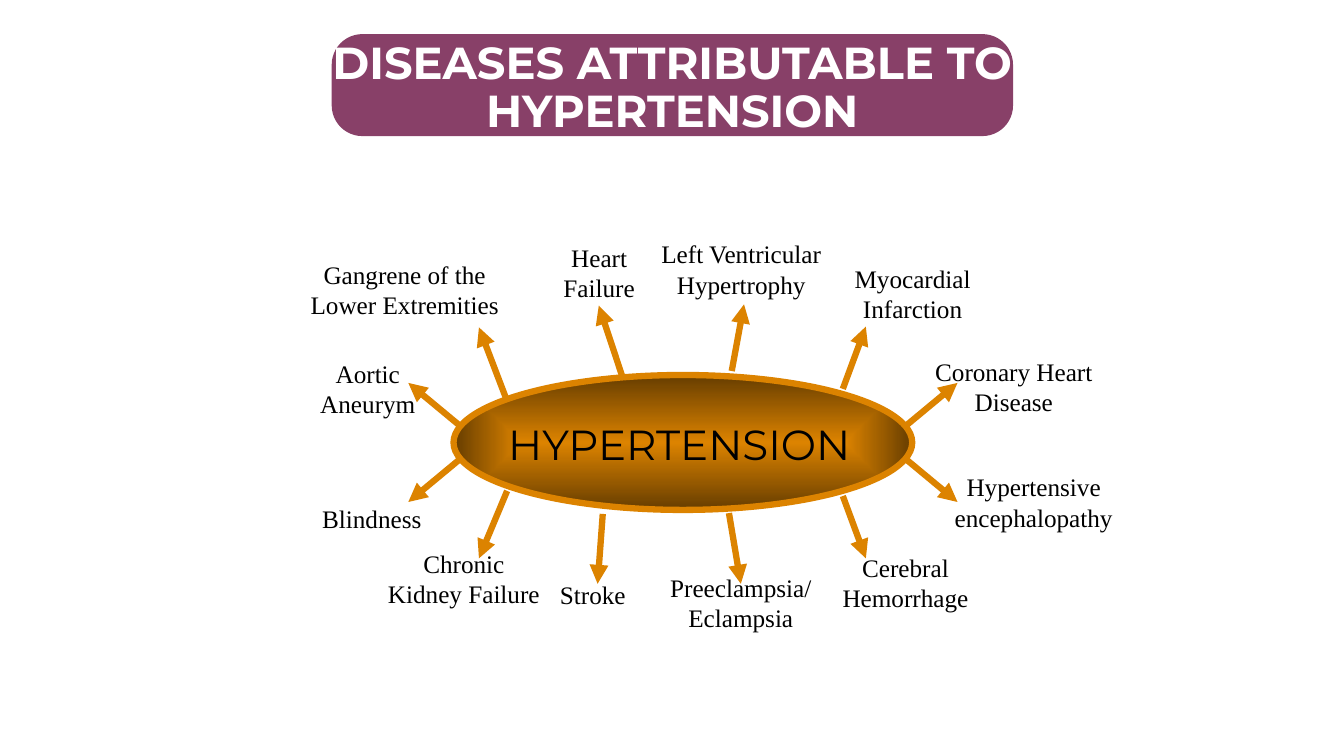
from lxml.etree import SubElement
from pptx import Presentation
from pptx.dml.color import RGBColor
from pptx.enum.shapes import MSO_CONNECTOR, MSO_SHAPE
from pptx.enum.text import MSO_ANCHOR, PP_ALIGN
from pptx.oxml.ns import qn
from pptx.util import Cm, Pt

ORANGE, BROWN, PLUM = "DC8300", "663D00", "884068"
SERIF, SANS = "Times New Roman", "Montserrat"

# Offsets in cm from the middle of the ellipse:
# name, lines, label (middle x, top, width), arrow (start x, y, end x, y)
ILLS = [
    ("Gangrene of the Lower Extremities", 2, (-7.01, -4.75, 5.61), (-4.46, -1.12, -5.14, -2.9)),
    ("Heart Failure", 2, (-2.11, -5.18, 3.78), (-1.54, -1.7, -2.12, -3.45)),
    ("Left Ventricular Hypertrophy", 2, (1.47, -5.26, 5.87), (1.23, -1.8, 1.54, -3.48)),
    ("Myocardial Infarction", 2, (5.79, -4.65, 5.87), (4.03, -1.35, 4.61, -2.92)),
    ("Coronary Heart Disease", 2, (8.34, -2.29, 4.57), (5.63, -0.43, 6.92, -1.5)),
    ("Hypertensive encephalopathy", 2, (8.84, 0.61, 5.21), (5.63, 0.43, 6.92, 1.5)),
    ("Cerebral Hemorrhage", 2, (5.61, 2.64, 5.11), (4.03, 1.35, 4.61, 2.92)),
    ("Preeclampsia/Eclampsia", 2, (1.46, 3.15, 5.49), (1.16, 1.78, 1.46, 3.56)),
    ("Stroke", 1, (-2.27, 3.33, 3.05), (-2.02, 1.8, -2.15, 3.56)),
    ("Chronic Kidney Failure", 2, (-5.52, 2.54, 4.52), (-4.43, 1.22, -5.14, 2.92)),
    ("Blindness", 1, (-7.84, 1.4, 4.27), (-5.63, 0.43, -6.92, 1.5)),
    ("Aortic Aneurym", 2, (-7.94, -2.24, 4.27), (-5.63, -0.43, -6.92, -1.5)),
]


def tint(code):
    return RGBColor.from_string(code)


def write(slide, text, x, y, w, h, face, size, color="000000", bold=False):
    """Add centred text and return its box."""
    box = slide.shapes.add_textbox(Cm(x), Cm(y), Cm(w), Cm(h))
    box.text_frame.word_wrap = True
    para = box.text_frame.paragraphs[0]
    para.text = text
    para.alignment = PP_ALIGN.CENTER
    font = para.font
    font.name, font.size, font.bold = face, Pt(size), bold
    font.color.rgb = tint(color)
    return box


def arrow(slide, x1, y1, x2, y2):
    line = slide.shapes.add_connector(
        MSO_CONNECTOR.STRAIGHT, Cm(x1), Cm(y1), Cm(x2), Cm(y2))
    line.line.color.rgb = tint(ORANGE)
    line.line.width = Pt(4.5)
    props = line._element.spPr
    SubElement(props.find(qn("a:ln")), qn("a:tailEnd"), type="triangle")
    SubElement(props, qn("a:effectLst"))


def glow(shape):
    """Fill from an orange middle to a brown rim."""
    shape.fill.gradient()
    for stop, code in zip(shape.fill.gradient_stops, (ORANGE, BROWN)):
        stop.color.rgb = tint(code)
    grad = shape._element.spPr.find(qn("a:gradFill"))
    grad.remove(grad.find(qn("a:lin")))
    way = SubElement(grad, qn("a:path"))
    way.set("path", "shape")
    SubElement(way, qn("a:fillToRect"), l="50000", t="50000", r="50000", b="50000")


def banner(slide, x, y, w, h):
    plate = slide.shapes.add_shape(
        MSO_SHAPE.ROUNDED_RECTANGLE, Cm(x), Cm(y), Cm(w), Cm(h))
    plate.adjustments[0] = 0.3
    plate.shadow.inherit = False
    plate.fill.solid()
    plate.fill.fore_color.rgb = tint(PLUM)
    plate.line.fill.background()
    title = write(slide, "DISEASES ATTRIBUTABLE TO HYPERTENSION",
                  x - 0.27, y + 0.03, w + 0.54, h + 0.15, SANS, 32, "FFFFFF", True)
    title.text_frame.vertical_anchor = MSO_ANCHOR.MIDDLE
    title.text_frame.paragraphs[0].line_spacing = 0.9


def wheel(slide, x, y, w, h):
    """Draw the ellipse in the box, with the diseases around it."""
    mx, my = x + w / 2, y + h / 2
    for _, _, _, (x1, y1, x2, y2) in ILLS:
        arrow(slide, mx + x1, my + y1, mx + x2, my + y2)
    hub = slide.shapes.add_shape(MSO_SHAPE.OVAL, Cm(x), Cm(y), Cm(w), Cm(h))
    hub.shadow.inherit = False
    glow(hub)
    hub.line.color.rgb = tint(ORANGE)
    hub.line.width = Pt(4.5)
    write(slide, "HYPERTENSION", mx - 5.12, my - 0.74, 10.06, 1.52, SANS, 30)
    for name, rows, (dx, dy, wide), _ in ILLS:
        write(slide, name, mx + dx - wide / 2, my + dy, wide,
              0.25 + 0.77 * rows, SERIF, 18)


def main():
    deck = Presentation()
    deck.slide_width, deck.slide_height = Cm(33.87), Cm(19.05)
    slide = deck.slides.add_slide(deck.slide_layouts[6])
    wheel(slide, 11.43, 9.45, 11.56, 3.4)
    banner(slide, 8.36, 0.86, 17.17, 2.57)
    deck.save("out.pptx")


if __name__ == "__main__":
    main()
